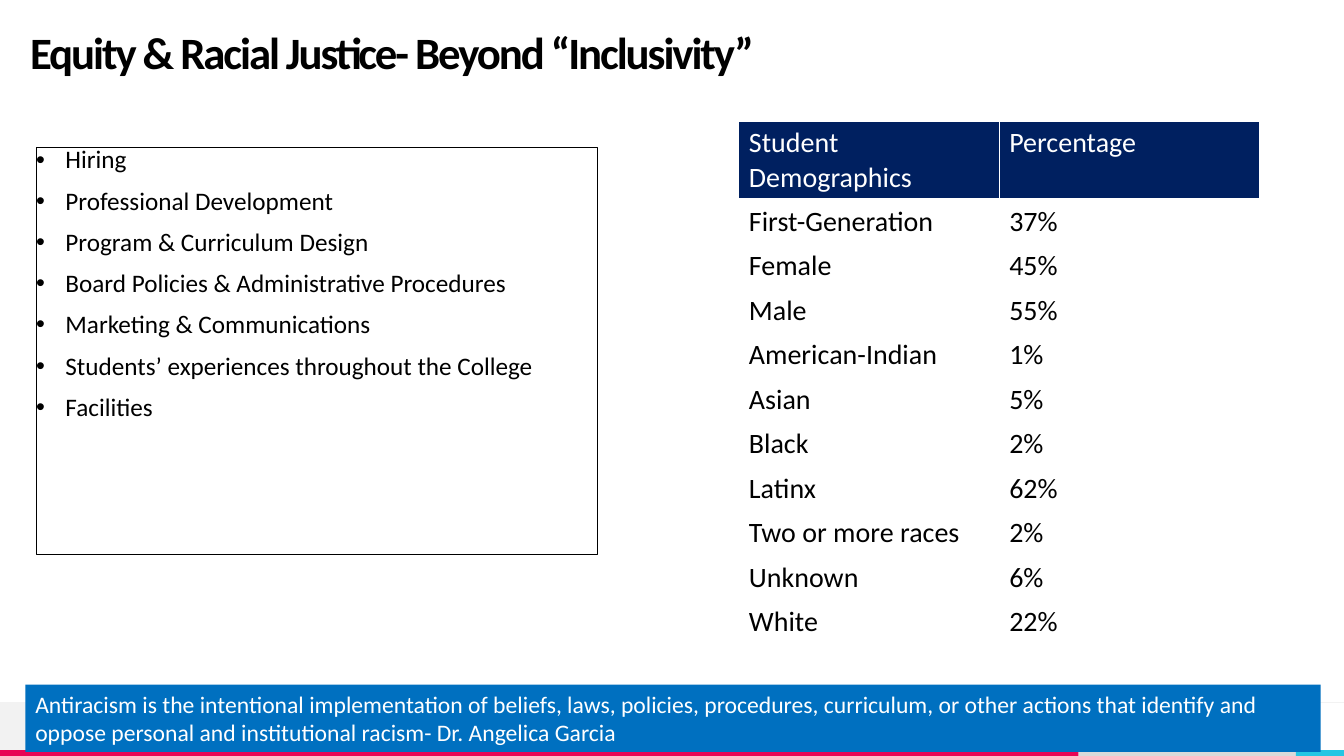
"""Build the slide on equity and racial justice with its demographics table."""
from pptx import Presentation
from pptx.dml.color import RGBColor
from pptx.enum.shapes import MSO_CONNECTOR, MSO_SHAPE
from pptx.enum.text import MSO_ANCHOR, MSO_AUTO_SIZE, PP_ALIGN
from pptx.oxml.ns import qn
from pptx.util import Cm, Pt
from lxml.etree import SubElement

FONT = "Calibri"
COLORS = {
    "black": "000000",
    "white": "FFFFFF",
    "navy": "002060",
    "blue": "0070C0",
    "pale": "F2F2F2",
    "grey": "DADADA",
    "pink": "E80554",
    "cyan": "25C6E3",
}
TITLE = "Equity & Racial Justice- Beyond “Inclusivity”"
FOCUS_AREAS = [
    "Hiring",
    "Professional Development",
    "Program & Curriculum Design",
    "Board Policies & Administrative Procedures",
    "Marketing & Communications",
    "Students’ experiences throughout the College",
    "Facilities",
]
QUOTE = (
    "Antiracism is the intentional implementation of beliefs, laws, policies, "
    "procedures, curriculum, or other actions that identify and oppose personal "
    "and institutional racism- Dr. Angelica Garcia"
)
DEMOGRAPHICS = [
    ("Student Demographics", "Percentage"),
    ("First-Generation", "37%"),
    ("Female", "45%"),
    ("Male", "55%"),
    ("American-Indian", "1%"),
    ("Asian", "5%"),
    ("Black", "2%"),
    ("Latinx", "62%"),
    ("Two or more races", "2%"),
    ("Unknown", "6%"),
    ("White", "22%"),
]
FOOTER_STRIPS = [
    (27.18, 18.9, 5.48, 0.15, "grey"),
    (0, 17.7, 27.18, 1.2, "pale"),
    (0, 18.9, 27.18, 0.15, "pink"),
    (32.66, 18.9, 1.21, 0.15, "cyan"),
]


def rgb(name):
    """Return the named colour."""
    return RGBColor.from_string(COLORS[name])


def write(para, text, size, color="black", bold=False, spacing=None, line=None, before=None):
    """Put formatted, left-aligned text into a paragraph."""
    para.alignment = PP_ALIGN.LEFT
    if line is not None:
        para.line_spacing = line
    if before is not None:
        para.space_before = Pt(before)
    span = para.add_run()
    span.text = text
    span.font.name = FONT
    span.font.size = Pt(size)
    span.font.bold = bold
    span.font.color.rgb = rgb(color)
    if spacing is not None:
        span.font._element.set("spc", str(round(spacing * 100)))


def add_bullet(para, indent):
    """Give a paragraph a hanging round bullet."""
    properties = para._p.get_or_add_pPr()
    properties.set("marL", str(indent))
    properties.set("indent", str(-indent))
    SubElement(properties, qn("a:buFont"), typeface="Arial")
    SubElement(properties, qn("a:buChar"), char="•")


def set_frame(frame, anchor=MSO_ANCHOR.TOP, inset=None):
    """Make a text frame wrap at a fixed size with the given anchor and inset."""
    frame.word_wrap = True
    frame.auto_size = MSO_AUTO_SIZE.NONE
    frame.vertical_anchor = anchor
    if inset is not None:
        frame.margin_left = frame.margin_right = inset
        frame.margin_top = frame.margin_bottom = inset


def add_box(page, left, top, width, height, fill, outline=None):
    """Add a flat rectangle, measured in centimetres."""
    box = page.shapes.add_shape(
        MSO_SHAPE.RECTANGLE, Cm(left), Cm(top), Cm(width), Cm(height)
    )
    box.shadow.inherit = False
    box.fill.solid()
    box.fill.fore_color.rgb = rgb(fill)
    if outline:
        box.line.color.rgb = rgb(outline)
        box.line.width = Pt(0.75)
    else:
        box.line.fill.background()
    return box


def add_footer(page):
    """Add the coloured strips and the hairline at the foot of the page."""
    for left, top, width, height, color in FOOTER_STRIPS:
        add_box(page, left, top, width, height, color)
    rule = page.shapes.add_connector(
        MSO_CONNECTOR.STRAIGHT, Cm(33.87), Cm(17.7), Cm(0), Cm(17.7)
    )
    rule.line.color.rgb = rgb("pale")
    rule.line.width = Pt(0.5)
    SubElement(rule._element.spPr, qn("a:effectLst"))


def set_title(page):
    """Place and fill the title placeholder."""
    title = page.shapes.title
    title.left, title.top = Cm(0.76), Cm(0.79)
    title.width, title.height = Cm(31.47), Cm(1.19)
    set_frame(title.text_frame, MSO_ANCHOR.MIDDLE, 0)
    write(title.text_frame.paragraphs[0], TITLE, 32, bold=True, spacing=-1.5, line=0.9)


def add_focus_list(page):
    """Add the outlined list of focus areas."""
    frame = add_box(page, 0.91, 3.71, 14.15, 10.26, "white", "black").text_frame
    set_frame(frame, inset=0)
    for index, area in enumerate(FOCUS_AREAS):
        para = frame.add_paragraph() if index else frame.paragraphs[0]
        write(para, area, 18, line=0.9, before=10)
        add_bullet(para, Cm(0.74))


def add_quote(page):
    """Add the blue band with the quotation."""
    frame = add_box(page, 0.64, 17.25, 32.64, 1.7, "blue").text_frame
    set_frame(frame)
    write(frame.paragraphs[0], QUOTE, 16.9, "white")


def add_cell_borders(cell):
    """Draw white borders round a header cell, thicker below."""
    properties = cell._tc.get_or_add_tcPr()
    for side, points in (("L", 1), ("R", 1), ("T", 1), ("B", 3)):
        edge = SubElement(properties, qn(f"a:ln{side}"), w=str(Pt(points)))
        fill = SubElement(edge, qn("a:solidFill"))
        SubElement(fill, qn("a:srgbClr"), val=COLORS["white"])


def add_demographics(page):
    """Add the table of student demographics."""
    table = page.shapes.add_table(
        len(DEMOGRAPHICS), 2, Cm(18.62), Cm(3.05), Cm(13.12), Cm(13.14)
    ).table
    table.horz_banding = False
    for column in table.columns:
        column.width = Cm(6.56)
    for index, values in enumerate(DEMOGRAPHICS):
        header = index == 0
        table.rows[index].height = Cm(1.94 if header else 1.12)
        for cell, text in zip(table.rows[index].cells, values):
            if header:
                add_cell_borders(cell)
            cell.fill.solid()
            cell.fill.fore_color.rgb = rgb("navy" if header else "white")
            para = cell.text_frame.paragraphs[0]
            write(para, text, 20, "white" if header else "black")


def main():
    """Build the deck and save it."""
    deck = Presentation()
    deck.slide_width, deck.slide_height = Cm(33.87), Cm(19.05)
    page = deck.slides.add_slide(deck.slide_layouts[5])
    add_footer(page)
    set_title(page)
    add_focus_list(page)
    add_quote(page)
    add_demographics(page)
    deck.save("out.pptx")


if __name__ == "__main__":
    main()
